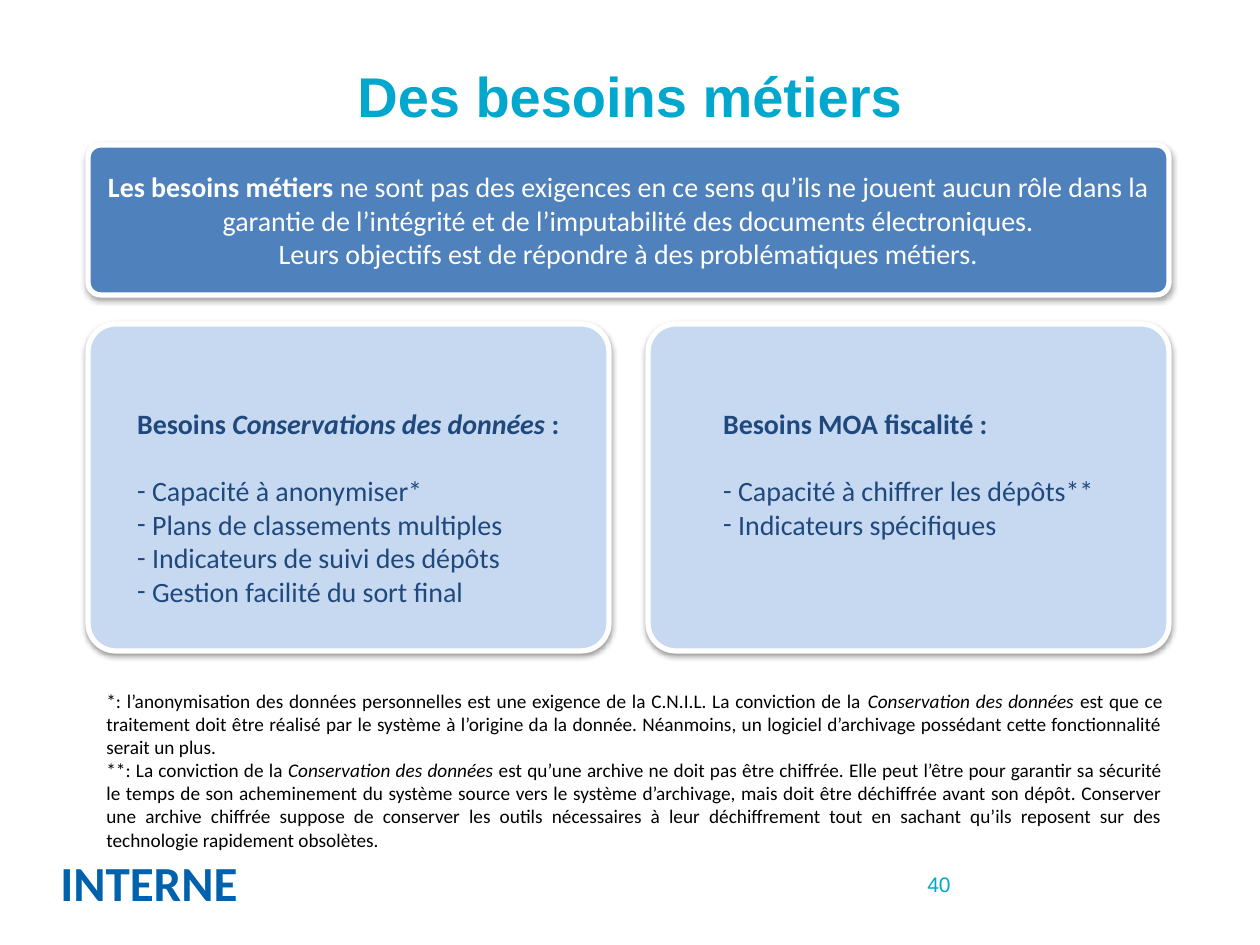
from lxml.etree import SubElement
from pptx import Presentation
from pptx.dml.color import RGBColor
from pptx.enum.shapes import MSO_SHAPE
from pptx.enum.text import MSO_ANCHOR, PP_ALIGN
from pptx.oxml.ns import qn
from pptx.util import Pt

SCALE = 914400 / 126
COLORS = {
    "cyan": "02A7CE", "blue": "4F81BD", "pale": "C6D9F1", "navy": "1F497D",
    "label": "0062AC", "white": "FFFFFF", "black": "000000",
}
BOLD, ITALIC = {"bold": True}, {"italic": True}


def px(length):
    """Turn pixels into EMU."""
    return round(length * SCALE)


def place(shape, area):
    """Move a shape to an area given as left, top, width, height."""
    for name, length in zip(("left", "top", "width", "height"), area):
        setattr(shape, name, px(length))


def write(para, spans, size, color, name="Calibri", align=PP_ALIGN.LEFT):
    """Fill a paragraph with (text, format) spans."""
    para.alignment = align
    for text, extra in spans:
        span = para.add_run()
        span.text = text
        for key, value in {"name": name, "size": Pt(size), **extra}.items():
            setattr(span.font, key, value)
        span.font.color.rgb = RGBColor.from_string(COLORS[color])


def write_all(frame, paragraphs, *style, **options):
    """Write several paragraphs into a text frame."""
    for index, spans in enumerate(paragraphs):
        para = frame.add_paragraph() if index else frame.paragraphs[0]
        write(para, spans, *style, **options)


def add_dash(para):
    """Give a paragraph a hanging dash."""
    properties = para._p.get_or_add_pPr()
    properties.set("marL", str(px(15)))
    properties.set("indent", str(-px(15)))
    SubElement(properties, qn("a:buFont"), typeface="Calibri")
    SubElement(properties, qn("a:buChar"), char="-")


def add_text(page, area, paragraphs, *style, wrap=True, anchor=MSO_ANCHOR.TOP, **options):
    """Add a text box."""
    box = page.shapes.add_textbox(*map(px, area))
    box.text_frame.word_wrap = wrap
    box.text_frame.vertical_anchor = anchor
    write_all(box.text_frame, paragraphs, *style, **options)


def add_panel(page, area, fill, opacity):
    """Add a rounded panel with a white border and a soft shadow."""
    panel = page.shapes.add_shape(MSO_SHAPE.ROUNDED_RECTANGLE, *map(px, area))
    panel.adjustments[0] = 0.085
    panel.fill.solid()
    panel.fill.fore_color.rgb = RGBColor.from_string(COLORS[fill])
    panel.line.color.rgb = RGBColor.from_string(COLORS["white"])
    panel.line.width = Pt(3)
    panel.shadow.inherit = False
    effects = panel._element.spPr.find(qn("a:effectLst"))
    shadow = SubElement(effects, qn("a:outerShdw"), blurRad=str(Pt(3.1)),
                        dist=str(Pt(1.7)), dir="5400000", rotWithShape="0")
    color = SubElement(shadow, qn("a:srgbClr"), val=COLORS["black"])
    SubElement(color, qn("a:alpha"), val=str(opacity * 1000))
    panel.text_frame.word_wrap = True
    return panel


def add_title(page, area, text):
    """Fill the title placeholder."""
    title = page.shapes.title
    place(title, area)
    title.text_frame.vertical_anchor = MSO_ANCHOR.MIDDLE
    write(title.text_frame.paragraphs[0], [(text, BOLD)], 32, "cyan", "Arial", PP_ALIGN.CENTER)


def add_banner(page, area, paragraphs):
    """Add the banner that sums up the page."""
    frame = add_panel(page, area, "blue", 35).text_frame
    frame.vertical_anchor = MSO_ANCHOR.MIDDLE
    write_all(frame, paragraphs, 16, "white", align=PP_ALIGN.CENTER)


def add_card(page, area, inset, heading, items):
    """Add a card with a heading above a dashed list."""
    frame = add_panel(page, area, "pale", 38).text_frame
    frame.vertical_anchor = MSO_ANCHOR.TOP
    frame.margin_left, frame.margin_top = px(inset), px(74)
    write_all(frame, [heading] + [[(item, {})] for item in items], 16, "navy")
    frame.paragraphs[0].space_after = Pt(19.5)
    for para in frame.paragraphs[1:]:
        add_dash(para)


def add_footer(page, area, label, number):
    """Add the label at the left and the page number."""
    left, top, width, height = area
    add_text(page, (left, top, 204, height), [[(label, BOLD)]], 28, "label", wrap=False)
    add_text(page, (left + width - 294, top + 13, 294, 50), [[(number, {})]], 12, "cyan",
             "Arial", anchor=MSO_ANCHOR.MIDDLE, align=PP_ALIGN.RIGHT)


def main():
    """Build and save the slide."""
    deck = Presentation()
    deck.slide_width, deck.slide_height = px(1260), px(945)
    page = deck.slides.add_slide(deck.slide_layouts[5])
    add_footer(page, (48, 846, 915, 72), "INTERNE", "40")
    add_title(page, (63, 16, 1134, 158), "Des besoins métiers")
    add_banner(page, (88, 145, 1081, 150), [
        [("Les besoins métiers ", BOLD),
         ("ne sont pas des exigences en ce sens qu’ils ne jouent aucun rôle dans la garantie de "
          "l’intégrité et de l’imputabilité des documents électroniques.", {})],
        [("Leurs objectifs est de répondre à des problématiques métiers.", {})],
    ])
    cards = [
        (41, [("Besoins ", BOLD), ("Conservations des données ", BOLD | ITALIC), (":", BOLD)],
         ["Capacité à anonymiser*", "Plans de classements multiples",
          "Indicateurs de suivi des dépôts", "Gestion facilité du sort final"]),
        (67, [("Besoins MOA fiscalité :", BOLD)],
         ["Capacité à chiffrer les dépôts**", "Indicateurs spécifiques"]),
    ]
    for column, card in enumerate(cards):
        add_card(page, (88 + column * 560, 324, 521, 327), *card)
    source = ("Conservation des données", ITALIC)
    add_text(page, (94, 683, 1081, 176), [
        [("*: l’anonymisation des données personnelles est une exigence de la C.N.I.L. "
          "La conviction de la ", {}), source,
         (" est que ce traitement doit être réalisé par le système à l’origine da la donnée. "
          "Néanmoins, un logiciel d’archivage possédant cette fonctionnalité serait un plus.", {})],
        [("**: La conviction de la ", {}), source,
         (" est qu’une archive ne doit pas être chiffrée. Elle peut l’être pour garantir sa "
          "sécurité le temps de son acheminement du système source vers le système d’archivage, "
          "mais doit être déchiffrée avant son dépôt. Conserver une archive chiffrée suppose de "
          "conserver les outils nécessaires à leur déchiffrement tout en sachant qu’ils reposent "
          "sur des technologie rapidement obsolètes.", {})],
    ], 11, "black", align=PP_ALIGN.JUSTIFY)
    deck.save("out.pptx")


if __name__ == "__main__":
    main()
